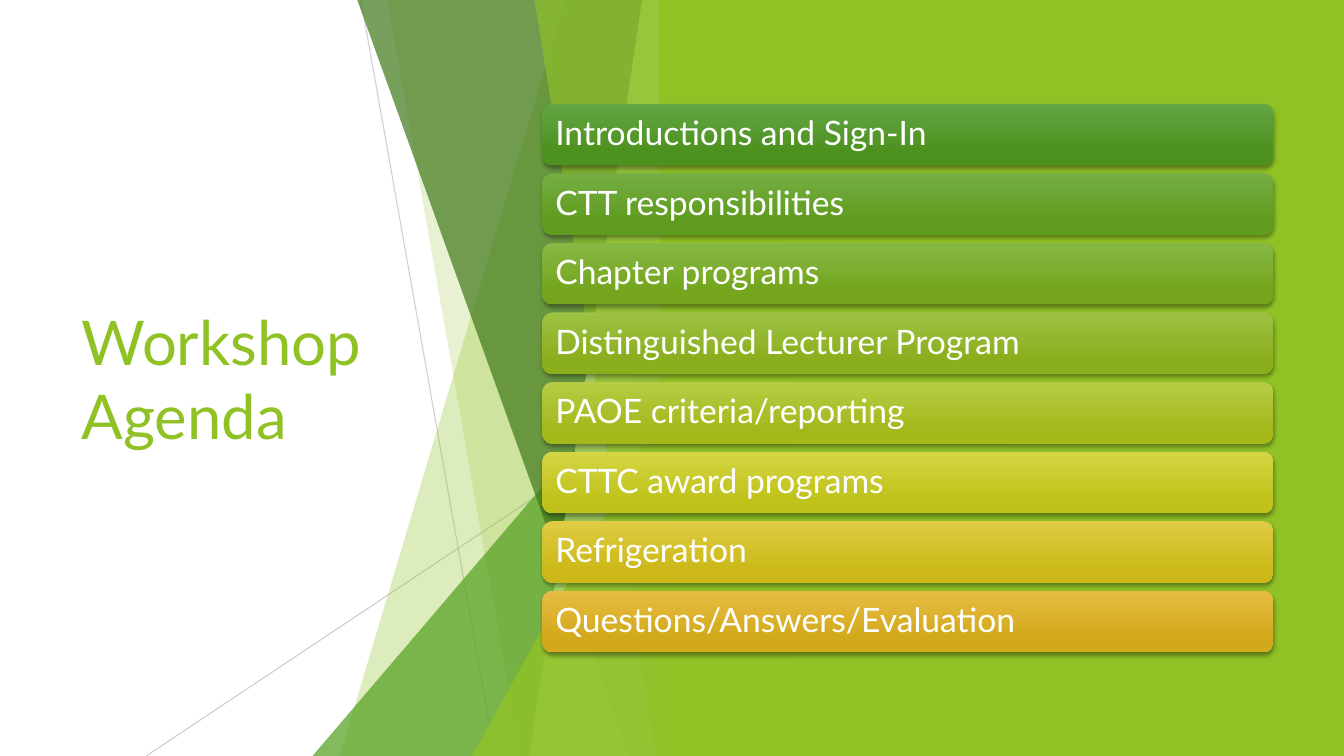
"""Build the workshop agenda slide with a faceted green backdrop."""
from lxml.etree import SubElement
from pptx import Presentation
from pptx.dml.color import RGBColor
from pptx.enum.shapes import MSO_CONNECTOR, MSO_SHAPE
from pptx.enum.text import MSO_ANCHOR, PP_ALIGN
from pptx.oxml.ns import qn
from pptx.util import Inches, Pt

WHITE = RGBColor(0xFF, 0xFF, 0xFF)
GREY = RGBColor(0xBF, 0xBF, 0xBF)
LIME = RGBColor(0x90, 0xC2, 0x26)
PALE_LIME = RGBColor(0xC0, 0xE4, 0x74)
GREEN = RGBColor(0x54, 0xA0, 0x21)
DARK_GREEN = RGBColor(0x3F, 0x78, 0x19)
FONT = "Lato"

TITLE = "Workshop Agenda"
AGENDA = [
    ("Introductions and Sign-In", "63A545", "4D921E"),
    ("CTT responsibilities", "74AE44", "5F9C1E"),
    ("Chapter programs", "87B844", "74A51D"),
    ("Distinguished Lecturer Program", "9DC244", "8BAE1D"),
    ("PAOE criteria/reporting", "B7CC44", "A4B81C"),
    ("CTTC award programs", "D4D643", "C0C21B"),
    ("Refrigeration", "E0CC43", "CCB919"),
    ("Questions/Answers/Evaluation", "E7BC43", "D2A91B"),
]
THIN_LINES = [
    ((3.58, 0), (4.91, 7.5), 75),
    ((6.66, 4.03), (1.45, 7.5), 80),
]
FACETS = [
    ("band", 5.61, 3.37, LIME, 30),
    ("band", 3.84, 5.16, LIME, 20),
    ("triangle", 3.10, 3.33, GREEN, 72),
    ("band", 3.54, 6.24, DARK_GREEN, 70),
    ("band", 6.37, 5.25, PALE_LIME, 70),
    ("band", 5.30, 6.51, LIME, 65),
    ("triangle", 4.68, 3.93, LIME, 80),
]
SLIDE_WIDTH, SLIDE_HEIGHT = 13.33, 7.5
FACET_TOP, FACET_RIGHT = -0.01, 6.66
PANEL_LEFT = 6.54
BAR_LEFT, BAR_TOP, BAR_WIDTH, BAR_HEIGHT, BAR_PITCH = 5.38, 1.03, 7.25, 0.61, 0.69


def set_alpha(shape, percent):
    color = next(shape._element.spPr.iter(qn("a:srgbClr")))
    SubElement(color, qn("a:alpha"), val=str(percent * 1000))


def paint(shape, color):
    shape.shadow.inherit = False
    shape.fill.solid()
    shape.fill.fore_color.rgb = color
    shape.line.fill.background()


def format_text(text_frame, size, color):
    text_frame.word_wrap = True
    text_frame.vertical_anchor = MSO_ANCHOR.MIDDLE
    paragraph = text_frame.paragraphs[0]
    paragraph.alignment = PP_ALIGN.LEFT
    font = paragraph.runs[0].font
    font.name, font.size, font.color.rgb = FONT, Pt(size), color
    return paragraph


def add_title(slide):
    title = slide.shapes.title
    title.left, title.top = Inches(0.71), Inches(1.51)
    title.width, title.height = Inches(3.88), Inches(4.48)
    title.text_frame.text = TITLE
    format_text(title.text_frame, 44, LIME)


def add_thin_line(slide, start, end, opacity):
    points = [Inches(value) for value in start + end]
    line = slide.shapes.add_connector(MSO_CONNECTOR.STRAIGHT, *points)
    line.line.color.rgb = GREY
    line.line.width = Pt(0.75)
    set_alpha(line, opacity)
    SubElement(line._element.spPr, qn("a:effectLst"))


def add_facet(slide, kind, first, second, color, opacity):
    if kind == "triangle":
        facet = slide.shapes.add_shape(
            MSO_SHAPE.ISOSCELES_TRIANGLE, Inches(first), Inches(second),
            Inches(FACET_RIGHT - first), Inches(SLIDE_HEIGHT - second))
        facet.adjustments[0] = 1
    else:
        corners = [(first, FACET_TOP), (FACET_RIGHT, FACET_TOP),
                   (FACET_RIGHT, SLIDE_HEIGHT), (second, SLIDE_HEIGHT)]
        points = [(Inches(x), Inches(y)) for x, y in corners]
        builder = slide.shapes.build_freeform(*points[0])
        builder.add_line_segments(points[1:], close=True)
        facet = builder.convert_to_shape()
    paint(facet, color)
    set_alpha(facet, opacity)


def add_panel(slide):
    panel = slide.shapes.add_shape(
        MSO_SHAPE.RECTANGLE, Inches(PANEL_LEFT), 0,
        Inches(SLIDE_WIDTH - PANEL_LEFT), Inches(SLIDE_HEIGHT))
    paint(panel, LIME)


def add_bar(slide, index, text, top_color, bottom_color):
    bar = slide.shapes.add_shape(
        MSO_SHAPE.ROUNDED_RECTANGLE, Inches(BAR_LEFT),
        Inches(BAR_TOP + index * BAR_PITCH), Inches(BAR_WIDTH), Inches(BAR_HEIGHT))
    bar.line.fill.background()
    bar.fill.gradient()
    bar.fill.gradient_angle = 270
    stops = zip(bar.fill.gradient_stops, (top_color, bottom_color), (0, 0.78))
    for stop, color, position in stops:
        stop.color.rgb = RGBColor.from_string(color)
        stop.position = position
    bar.shadow.inherit = False
    effects = bar._element.spPr.find(qn("a:effectLst"))
    shadow = SubElement(effects, qn("a:outerShdw"), blurRad=str(Pt(3)),
                        dist=str(Pt(2)), dir="5400000", rotWithShape="0")
    shadow_color = SubElement(shadow, qn("a:srgbClr"), val="000000")
    SubElement(shadow_color, qn("a:alpha"), val="35000")
    bar.text_frame.text = text
    paragraph = format_text(bar.text_frame, 24, WHITE)
    paragraph.line_spacing = 0.9


def main():
    presentation = Presentation()
    presentation.slide_width = Inches(SLIDE_WIDTH)
    presentation.slide_height = Inches(SLIDE_HEIGHT)
    slide = presentation.slides.add_slide(presentation.slide_layouts[5])
    add_title(slide)
    for start, end, opacity in THIN_LINES:
        add_thin_line(slide, start, end, opacity)
    for facet in FACETS:
        add_facet(slide, *facet)
    add_panel(slide)
    for index, item in enumerate(AGENDA):
        add_bar(slide, index, *item)
    presentation.save("out.pptx")


if __name__ == "__main__":
    main()
